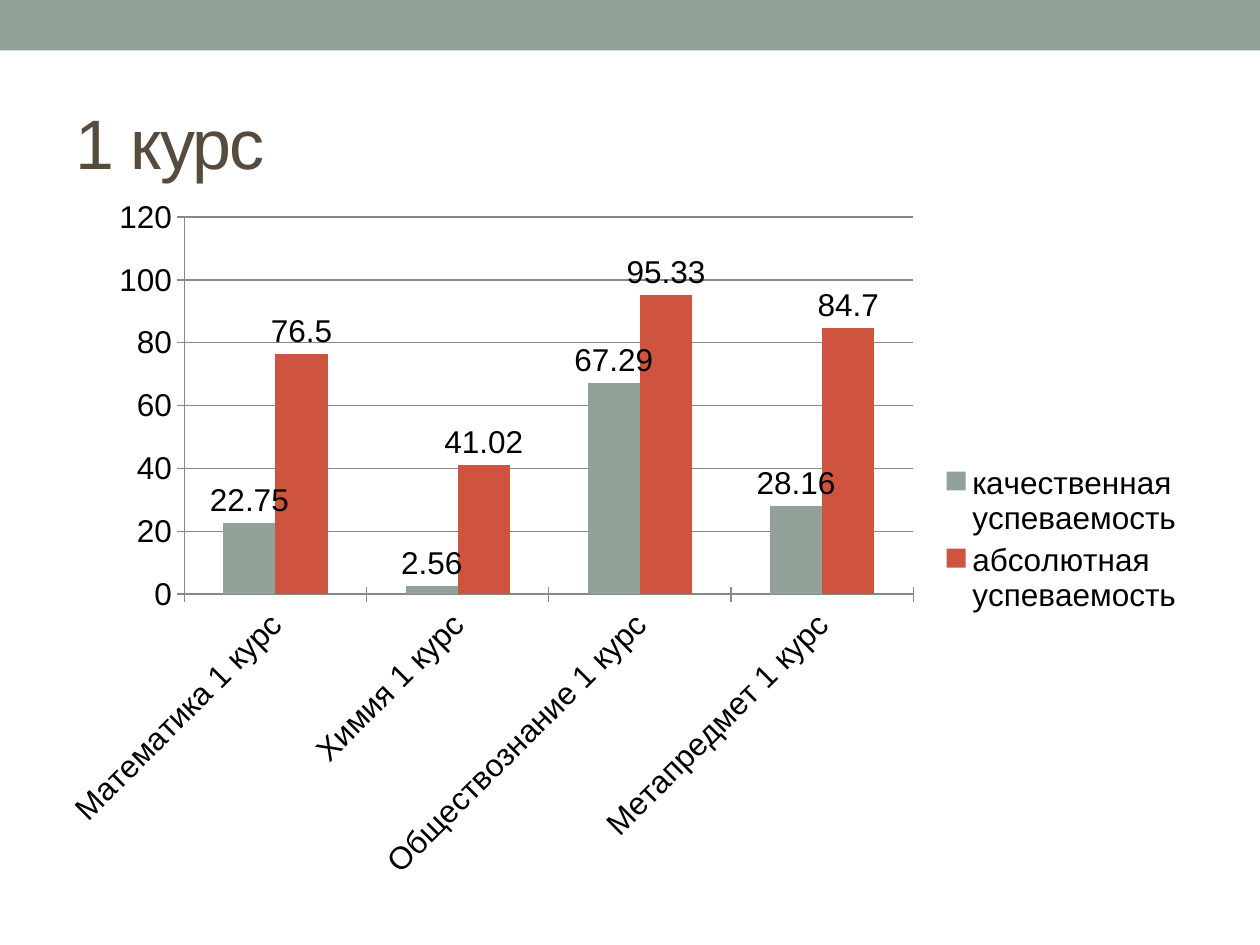
from pptx import Presentation
from pptx.chart.data import CategoryChartData
from pptx.dml.color import RGBColor
from pptx.enum.chart import (XL_CHART_TYPE, XL_LABEL_POSITION,
                             XL_LEGEND_POSITION, XL_TICK_MARK)
from pptx.enum.shapes import MSO_SHAPE
from pptx.enum.text import MSO_ANCHOR, PP_ALIGN
from pptx.util import Inches, Pt

SAGE = RGBColor(0x93, 0xA2, 0x99)
BRICK = RGBColor(0xCF, 0x54, 0x3F)
BROWN = RGBColor(0x56, 0x4B, 0x3C)
BLACK = RGBColor(0, 0, 0)
GRAY = RGBColor(0x88, 0x88, 0x88)
FONT = "Arial"

SUBJECTS = ["Математика 1 курс", " Химия 1 курс",
            "Обществознание 1 курс", "Метапредмет 1 курс"]
RESULTS = [
    ("качественная успеваемость", [22.75, 2.56, 67.29, 28.16], SAGE),
    ("абсолютная успеваемость", [76.5, 41.02, 95.33, 84.7], BRICK),
]


class SlideBuilder:
    """Holds the style and the slide; lengths are in inches on a 10 x 7.5 grid."""

    def __init__(self, deck):
        self.slide = deck.slides.add_slide(deck.slide_layouts[5])

    def style(self, font, size, color):
        font.name, font.size = FONT, Pt(size)
        font.color.rgb = color

    def band(self, *box):
        band = self.slide.shapes.add_shape(MSO_SHAPE.RECTANGLE, *map(Inches, box))
        band.shadow.inherit = False
        band.fill.solid()
        band.fill.fore_color.rgb = SAGE
        band.line.fill.background()

    def title(self, text, *box):
        title = self.slide.shapes.title
        title.left, title.top, title.width, title.height = map(Inches, box)
        frame = title.text_frame
        frame.vertical_anchor = MSO_ANCHOR.MIDDLE
        heading = frame.paragraphs[0]
        heading.alignment = PP_ALIGN.LEFT
        run = heading.add_run()
        run.text = text
        self.style(run.font, 40, BROWN)
        run.font._element.set("spc", "-100")

    def columns(self, categories, results, *box):
        data = CategoryChartData()
        data.categories = categories
        for name, values, _ in results:
            data.add_series(name, values)
        chart = self.slide.shapes.add_chart(
            XL_CHART_TYPE.COLUMN_CLUSTERED, *map(Inches, box), data).chart
        self.style(chart.font, 18, BLACK)
        chart.has_title = False

        # Legend
        chart.has_legend = True
        chart.legend.position = XL_LEGEND_POSITION.RIGHT
        chart.legend.include_in_layout = False

        # Axes and grid
        for axis in (chart.category_axis, chart.value_axis):
            axis.major_tick_mark = XL_TICK_MARK.CROSS
            axis.format.line.color.rgb = GRAY
            self.style(axis.tick_labels.font, 18, BLACK)
        subject_labels = chart.category_axis._element.txPr.bodyPr
        subject_labels.set("rot", "-2700000")
        chart.value_axis.has_major_gridlines = True
        chart.value_axis.major_gridlines.format.line.color.rgb = GRAY

        # Columns and their values
        plot = chart.plots[0]
        plot.vary_by_categories = False
        plot.gap_width, plot.overlap = 150, 0
        for series, (_, _, color) in zip(plot.series, results):
            series.format.fill.solid()
            series.format.fill.fore_color.rgb = color
            labels = series.data_labels
            labels.show_value = True
            labels.position = XL_LABEL_POSITION.OUTSIDE_END
            self.style(labels.font, 18, BLACK)


def main():
    deck = Presentation()
    deck.slide_width, deck.slide_height = Inches(10), Inches(7.5)
    page = SlideBuilder(deck)
    page.band(0, 0, 10, 0.4)
    page.title("1 курс", 0.5, 0.58, 9, 1.08)
    page.columns(SUBJECTS, RESULTS, 0.35, 1.47, 9.15, 5.62)
    deck.save("out.pptx")


if __name__ == "__main__":
    main()
